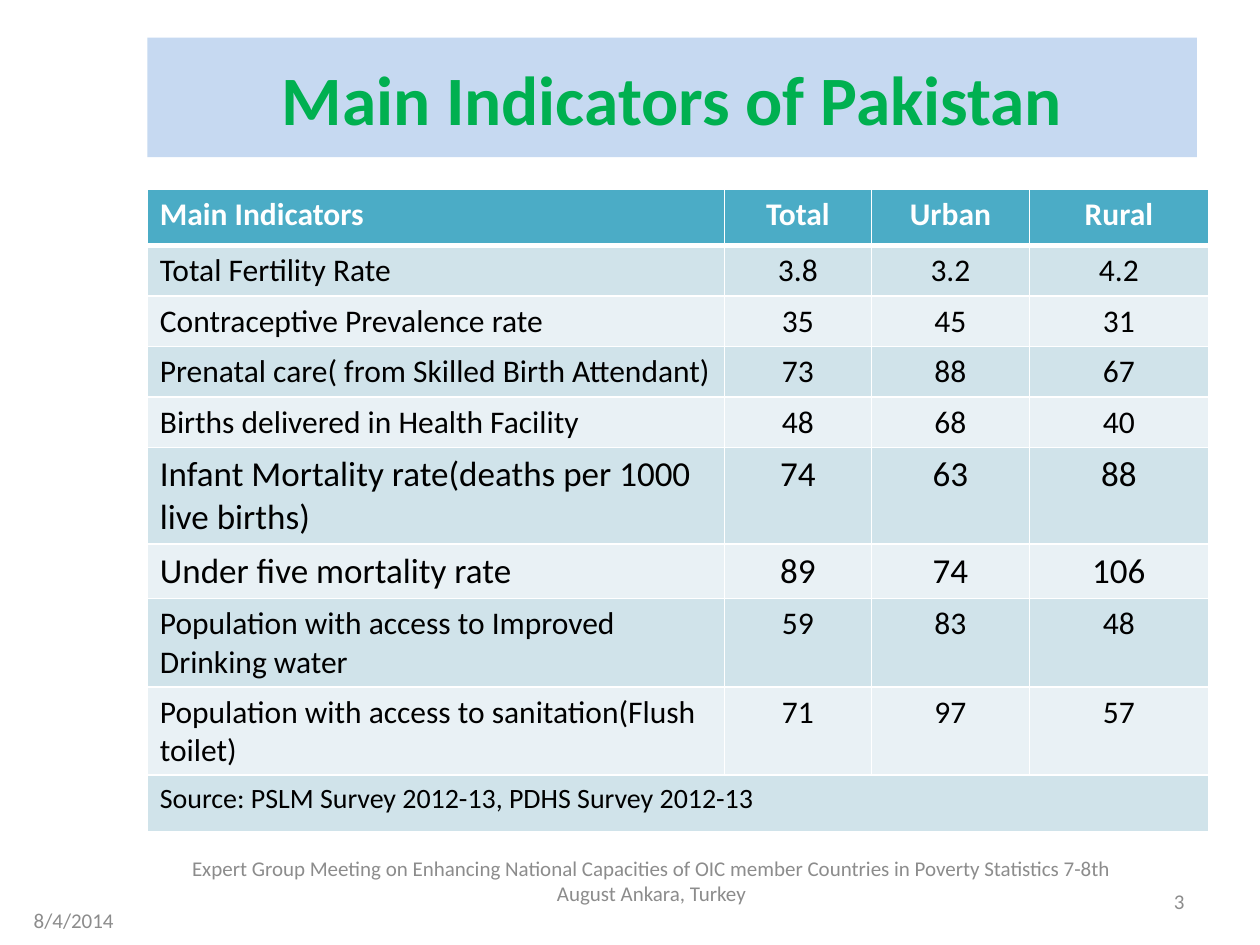
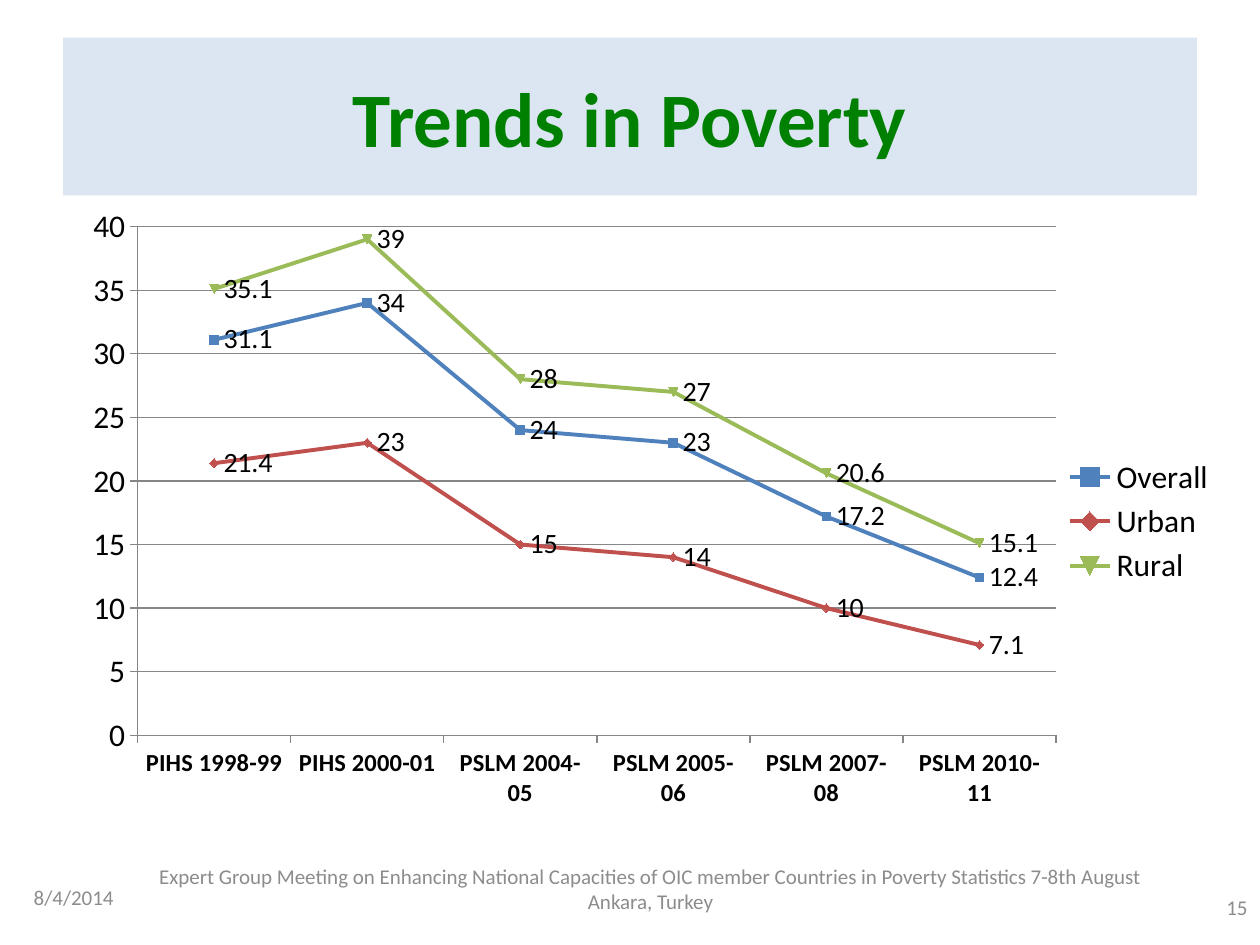
"""Build two slides on the main indicators and the poverty trends of Pakistan."""
from dataclasses import dataclass

from lxml import etree
from pptx import Presentation
from pptx.chart.data import CategoryChartData
from pptx.dml.color import RGBColor
from pptx.enum.chart import XL_CHART_TYPE, XL_LEGEND_POSITION, XL_TICK_MARK
from pptx.enum.text import MSO_ANCHOR, MSO_AUTO_SIZE, PP_ALIGN
from pptx.oxml.ns import qn
from pptx.util import Cm, Pt

LEFT, CENTER, RIGHT = PP_ALIGN.LEFT, PP_ALIGN.CENTER, PP_ALIGN.RIGHT
MIDDLE = MSO_ANCHOR.MIDDLE
NO_AUTOFIT = MSO_AUTO_SIZE.NONE
LINE_MARKERS = XL_CHART_TYPE.LINE_MARKERS
LEGEND_RIGHT = XL_LEGEND_POSITION.RIGHT
TICK_OUTSIDE = XL_TICK_MARK.OUTSIDE

FONT = "Calibri"
TITLE_ONLY_LAYOUT = 5
WHITE = RGBColor(0xFF, 0xFF, 0xFF)
BLACK = RGBColor(0x00, 0x00, 0x00)
FOOTER_GRAY = RGBColor(0x8C, 0x8C, 0x8C)
AXIS_GRAY = RGBColor(0x86, 0x86, 0x86)
BAND_BLUE = RGBColor(0xC6, 0xD9, 0xF1)
BAND_PALE = RGBColor(0xDC, 0xE6, 0xF2)
TITLE_GREEN = RGBColor(0x00, 0xB0, 0x50)
TITLE_DARK_GREEN = RGBColor(0x00, 0x80, 0x00)
HEADER_TEAL = RGBColor(0x4B, 0xAC, 0xC6)
ROW_DARK = RGBColor(0xD0, 0xE3, 0xEA)
ROW_LIGHT = RGBColor(0xE9, 0xF1, 0xF5)

DATE = "8/4/2014"
MEETING = ("Expert Group Meeting on Enhancing National Capacities of OIC member "
           "Countries in Poverty Statistics 7-8th August Ankara, Turkey")


@dataclass(frozen=True)
class Box:
    """Position and size in centimetres."""
    left: float
    top: float
    width: float
    height: float

    def lengths(self) -> tuple:
        """Return left, top, width and height as lengths."""
        return Cm(self.left), Cm(self.top), Cm(self.width), Cm(self.height)


@dataclass(frozen=True)
class TitleBand:
    """A coloured title band."""
    text: str
    box: Box
    fill: RGBColor
    color: RGBColor
    size: float


@dataclass(frozen=True)
class FooterItem:
    """One text of the slide footer."""
    text: str
    box: Box
    align: PP_ALIGN


@dataclass(frozen=True)
class IndicatorRow:
    """One table row with its height in centimetres."""
    cells: tuple
    height: float
    size: float = 18


@dataclass(frozen=True)
class PovertySeries:
    """One line of the poverty chart."""
    name: str
    values: tuple
    color: RGBColor


INDICATOR_TITLE = TitleBand("Main Indicators of Pakistan", Box(2.97, 0.76, 21.16, 2.41),
                            BAND_BLUE, TITLE_GREEN, 39.6)
POVERTY_TITLE = TitleBand("Trends in Poverty", Box(1.27, 0.76, 22.86, 3.18),
                          BAND_PALE, TITLE_DARK_GREEN, 44)
INDICATOR_FOOTER = (
    FooterItem("3", Box(18.21, 17.65, 5.92, 1.02), RIGHT),
    FooterItem(MEETING, Box(3.61, 17.15, 19.05, 1.22), CENTER),
    FooterItem(DATE, Box(0.43, 18.03, 5.92, 1.02), LEFT),
)
POVERTY_FOOTER = (
    FooterItem(DATE, Box(0.43, 17.58, 5.92, 1.02), LEFT),
    FooterItem("15", Box(19.48, 17.78, 5.92, 1.02), RIGHT),
    FooterItem(MEETING, Box(2.74, 17.15, 20.75, 1.52), CENTER),
)

TABLE_BOX = Box(2.97, 3.81, 21.39, 12.27)
COLUMN_WIDTHS = (11.63, 2.97, 3.18, 3.61)
INDICATOR_ROWS = (
    IndicatorRow(("Main Indicators", "Total", "Urban", "Rural"), 1.14),
    IndicatorRow(("Total Fertility Rate", "3.8", "3.2", "4.2"), 0.94),
    IndicatorRow(("Contraceptive Prevalence rate", "35", "45", "31"), 0.94),
    IndicatorRow(("Prenatal care( from Skilled Birth Attendant)", "73", "88", "67"), 0.94),
    IndicatorRow(("Births delivered in Health Facility", "48", "68", "40"), 0.94),
    IndicatorRow(("Infant Mortality rate(deaths per 1000 live births)", "74", "63", "88"),
                 1.83, 20),
    IndicatorRow(("Under five mortality rate", "89", "74", "106"), 1.04, 20),
    IndicatorRow(("Population with access to Improved Drinking water", "59", "83", "48"), 1.68),
    IndicatorRow(("Population with access to sanitation(Flush toilet)", "71", "97", "57"), 1.68),
    IndicatorRow(("Source: PSLM Survey 2012-13, PDHS Survey 2012-13",), 1.14, 16),
)

CHART_BOX = Box(1.27, 4.01, 23.5, 13)
PLOT_AREA = {"x": 0.064, "y": 0.043, "w": 0.788, "h": 0.789}
SURVEYS = ("PIHS 1998-99", "PIHS 2000-01", "PSLM 2004-05",
           "PSLM 2005-06", "PSLM 2007-08", "PSLM 2010-11")
POVERTY_SERIES = (
    PovertySeries("Overall", (31.1, 34, 24, 23, 17.2, 12.4), RGBColor(0x4F, 0x81, 0xBD)),
    PovertySeries("Urban", (21.4, 23, 15, 14, 10, 7.1), RGBColor(0xC0, 0x50, 0x4D)),
    PovertySeries("Rural", (35.1, 39, 28, 27, 20.6, 15.1), RGBColor(0x9B, 0xBB, 0x59)),
)


def format_font(font, *, size: float, color: RGBColor = BLACK, bold: bool = False) -> None:
    """Set the typeface, size, colour and weight of a font."""
    font.name = FONT
    font.size = Pt(size)
    font.bold = bold
    font.color.rgb = color


def write_text(text_frame, text: str, *, size: float, color: RGBColor = BLACK,
               bold: bool = False, align: PP_ALIGN = LEFT) -> None:
    """Write one formatted paragraph into a text frame."""
    text_frame.word_wrap = True
    paragraph = text_frame.paragraphs[0]
    paragraph.alignment = align
    run = paragraph.add_run()
    run.text = text
    format_font(run.font, size=size, color=color, bold=bold)


def add_framed_slide(presentation, band: TitleBand, footer: tuple):
    """Add a slide with its title band and footer texts."""
    slide = presentation.slides.add_slide(presentation.slide_layouts[TITLE_ONLY_LAYOUT])
    title = slide.shapes.title
    title.left, title.top, title.width, title.height = band.box.lengths()
    title.fill.solid()
    title.fill.fore_color.rgb = band.fill
    title.text_frame.auto_size = NO_AUTOFIT
    title.text_frame.vertical_anchor = MIDDLE
    write_text(title.text_frame, band.text, size=band.size, color=band.color,
               bold=True, align=CENTER)
    for item in footer:
        text_box = slide.shapes.add_textbox(*item.box.lengths())
        text_box.text_frame.vertical_anchor = MIDDLE
        write_text(text_box.text_frame, item.text, size=12, color=FOOTER_GRAY, align=item.align)
    return slide


def set_cell_borders(cell, bottom_width: float) -> None:
    """Draw white borders round a table cell."""
    properties = cell._tc.get_or_add_tcPr()
    for side, width in (("L", 1), ("R", 1), ("T", 1), ("B", bottom_width)):
        line = etree.SubElement(properties, qn(f"a:ln{side}"), w=str(Pt(width)))
        fill = etree.SubElement(line, qn("a:solidFill"))
        etree.SubElement(fill, qn("a:srgbClr"), val=str(WHITE))


def add_indicator_table(slide) -> None:
    """Add the table of indicators with its merged source row."""
    table = slide.shapes.add_table(len(INDICATOR_ROWS), len(COLUMN_WIDTHS),
                                   *TABLE_BOX.lengths()).table
    for column, width in zip(table.columns, COLUMN_WIDTHS):
        column.width = Cm(width)
    for row_index, row in enumerate(INDICATOR_ROWS):
        is_header = row_index == 0
        row_fill = HEADER_TEAL if is_header else ROW_DARK if row_index % 2 else ROW_LIGHT
        table.rows[row_index].height = Cm(row.height)
        for cell in table.rows[row_index].cells:
            set_cell_borders(cell, 3 if is_header else 1)
            cell.fill.solid()
            cell.fill.fore_color.rgb = row_fill
        for column_index, text in enumerate(row.cells):
            write_text(table.cell(row_index, column_index).text_frame, text, size=row.size,
                       color=WHITE if is_header else BLACK, bold=is_header,
                       align=CENTER if column_index else LEFT)
    last_row = len(INDICATOR_ROWS) - 1
    table.cell(last_row, 0).merge(table.cell(last_row, len(COLUMN_WIDTHS) - 1))


def set_plot_area(chart) -> None:
    """Fix the inner plot area as fractions of the chart."""
    plot_area = chart._chartSpace.chart.plotArea
    for old_layout in plot_area.findall(qn("c:layout")):
        plot_area.remove(old_layout)
    layout = etree.Element(qn("c:layout"))
    plot_area.insert(0, layout)
    manual = etree.SubElement(layout, qn("c:manualLayout"))
    settings = {"layoutTarget": "inner", "xMode": "edge", "yMode": "edge", **PLOT_AREA}
    for name, value in settings.items():
        etree.SubElement(manual, qn(f"c:{name}"), val=str(value))


def format_line(line, color: RGBColor, width: float) -> None:
    """Set the colour and width of a line."""
    line.color.rgb = color
    line.width = Pt(width)


def format_axes(chart) -> None:
    """Set the scale, ticks, gridlines and fonts of both axes."""
    value_axis, category_axis = chart.value_axis, chart.category_axis
    value_axis.minimum_scale = 0
    value_axis.maximum_scale = 40
    value_axis.major_unit = 5
    value_axis.has_major_gridlines = True
    format_line(value_axis.major_gridlines.format.line, AXIS_GRAY, 0.75)
    for axis, size, bold in ((value_axis, 18, False), (category_axis, 14, True)):
        axis.major_tick_mark = TICK_OUTSIDE
        format_line(axis.format.line, AXIS_GRAY, 0.75)
        format_font(axis.tick_labels.font, size=size, bold=bold)


def add_poverty_chart(slide) -> None:
    """Add the line chart of poverty by survey."""
    chart_data = CategoryChartData()
    chart_data.categories = SURVEYS
    for entry in POVERTY_SERIES:
        chart_data.add_series(entry.name, entry.values)
    chart = slide.shapes.add_chart(LINE_MARKERS, *CHART_BOX.lengths(), chart_data).chart
    format_font(chart.font, size=18)
    chart.has_title = False
    chart.has_legend = True
    chart.legend.position = LEGEND_RIGHT
    chart.legend.include_in_layout = False
    format_font(chart.legend.font, size=18)
    chart.plots[0].vary_by_categories = False
    format_axes(chart)
    set_plot_area(chart)
    for series, entry in zip(chart.plots[0].series, POVERTY_SERIES):
        series.smooth = False
        format_line(series.format.line, entry.color, 2.25)
        series.marker.size = 5
        series.marker.format.fill.solid()
        series.marker.format.fill.fore_color.rgb = entry.color
        series.marker.format.line.color.rgb = entry.color
        series.data_labels.show_value = True
        format_font(series.data_labels.font, size=16)


def main() -> None:
    """Build and save the presentation."""
    presentation = Presentation()
    presentation.slide_width, presentation.slide_height = Cm(25.4), Cm(19.05)
    add_indicator_table(add_framed_slide(presentation, INDICATOR_TITLE, INDICATOR_FOOTER))
    add_poverty_chart(add_framed_slide(presentation, POVERTY_TITLE, POVERTY_FOOTER))
    presentation.save("out.pptx")


if __name__ == "__main__":
    main()
